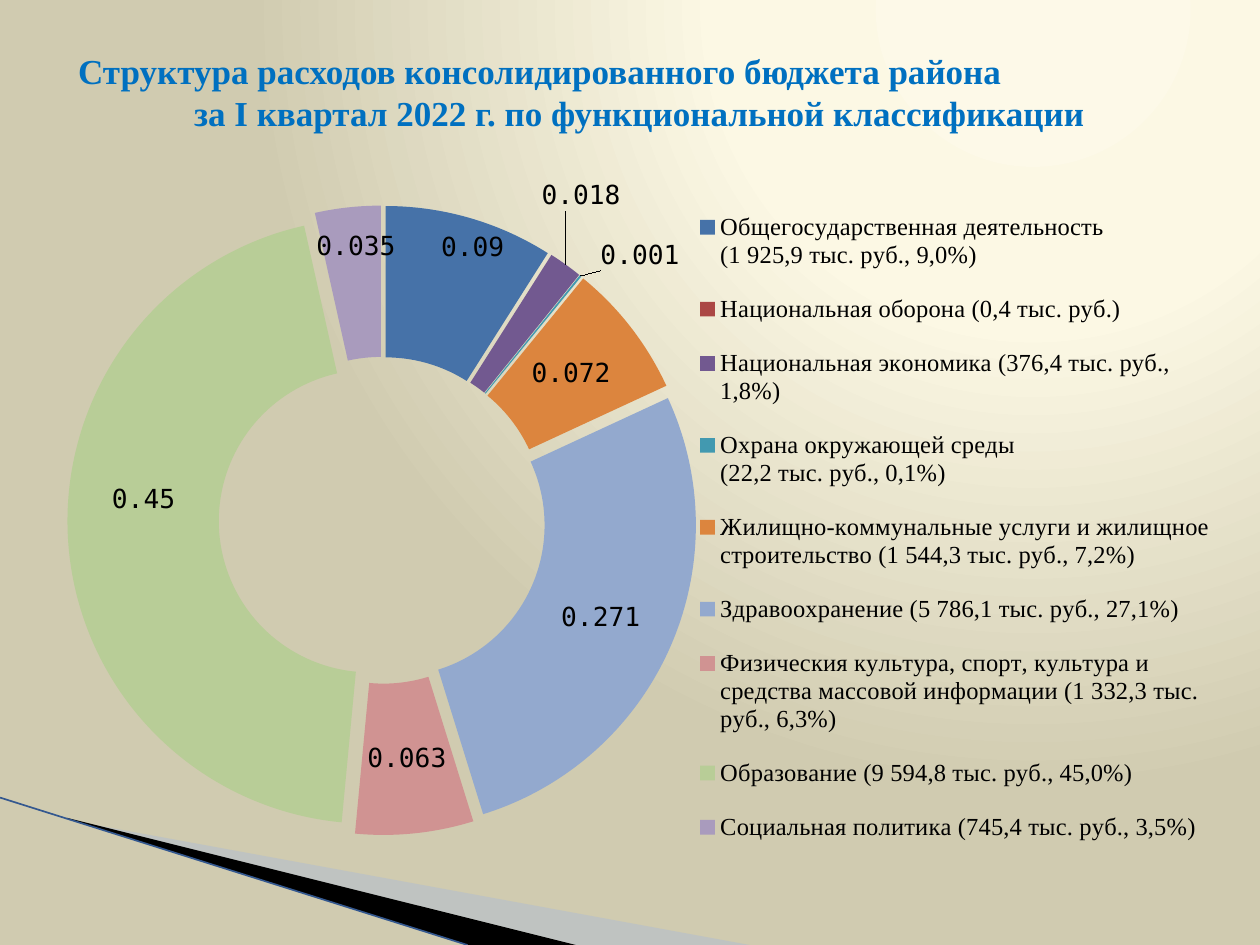
from lxml import etree
from pptx import Presentation
from pptx.chart.data import CategoryChartData
from pptx.dml.color import RGBColor
from pptx.enum.chart import XL_CHART_TYPE as ChartType, XL_LEGEND_POSITION as LegendPosition
from pptx.enum.shapes import MSO_CONNECTOR as Connector
from pptx.enum.text import MSO_ANCHOR as Anchor, PP_ALIGN as Align
from pptx.oxml import parse_xml
from pptx.oxml.ns import nsdecls, qn
from pptx.util import Inches, Pt

COLORS = {
    "glow": "FDF9E8", "cream": "FCF8E4", "sand": "D0CBB0",
    "mist": "A7B9DB", "black": "000000", "edge": "34588F", "title": "0070C0",
}
SERIF, MONO = "Times New Roman", "DejaVu Sans Mono"

# Legend text, share of spending, slice colour, label offset (fractions of the chart)
EXPENSES = [
    ("Общегосударственная деятельность\n(1 925,9 тыс. руб., 9,0%)", 0.09, "4672A8", (0.02, -0.06)),
    ("Национальная оборона (0,4 тыс. руб.)", None, "AB4744", None),
    ("", None, "8AA64F", None),
    ("Национальная экономика (376,4 тыс. руб., 1,8%)", 0.018, "725990", (0.05, -0.18)),
    ("Охрана окружающей среды\n(22,2 тыс. руб., 0,1%)", 0.001, "4299B0", (0.09, -0.11)),
    ("Жилищно-коммунальные услуги и жилищное строительство (1 544,3 тыс. руб., 7,2%)",
     0.072, "DC853E", None),
    ("Здравоохранение (5 786,1 тыс. руб., 27,1%)", 0.271, "93A9CE", None),
    ("Физическия культура, спорт, культура и средства массовой информации "
     "(1 332,3 тыс. руб., 6,3%)", 0.063, "D09392", None),
    ("Образование (9 594,8 тыс. руб., 45,0%)", 0.45, "B8CD97", (0, -0.05)),
    ("Социальная политика (745,4 тыс. руб., 3,5%)", 0.035, "A99BBD", (0, -0.05)),
]
HIDDEN_ENTRY = 2


def color(name):
    return RGBColor.from_string(COLORS[name])


def manual_layout(x, y, size=None):
    """Chart layout element: a placed box, or an offset when no size is given."""
    values = {"x": x, "y": y}
    modes = ""
    if size:
        values.update(w=size[0], h=size[1])
        modes = '<c:xMode val="edge"/><c:yMode val="edge"/>'
    parts = "".join(f'<c:{key} val="{value}"/>' for key, value in values.items())
    return parse_xml(f'<c:layout {nsdecls("c")}><c:manualLayout>{modes}{parts}'
                     '</c:manualLayout></c:layout>')


presentation = Presentation()
presentation.slide_width, presentation.slide_height = Inches(10), Inches(7.5)
slide = presentation.slides.add_slide(presentation.slide_layouts[5])

# Background: round glow from the upper right
slide.background.fill.gradient()
gradient = slide.element.find(".//" + qn("a:gradFill"))
stops = "".join(
    f'<a:gs pos="{position}"><a:srgbClr val="{COLORS[name]}"/></a:gs>'
    for position, name in ((0, "glow"), (40000, "cream"), (100000, "sand")))
gradient.getparent().replace(gradient, parse_xml(
    f'<a:gradFill {nsdecls("a")} rotWithShape="1"><a:gsLst>{stops}</a:gsLst>'
    '<a:path path="circle"><a:fillToRect l="65000" b="98000"/></a:path></a:gradFill>'))

# Corner wedges
wedges = [
    ("mist", [(0.55, 6.51), (5.95, 7.5), (4.56, 7.5), (0.55, 6.5)]),
    ("black", [(0.53, 6.49), (4.57, 7.5), (3.72, 7.5), (0.54, 6.5)]),
]
for name, points in wedges:
    corners = [(Inches(x), Inches(y)) for x, y in points]
    builder = slide.shapes.build_freeform(*corners[0])
    builder.add_line_segments(corners[1:], close=True)
    wedge = builder.convert_to_shape()
    wedge.shadow.inherit = False
    wedge.fill.solid()
    wedge.fill.fore_color.rgb = color(name)
    wedge.line.fill.background()
    if name == "mist":
        fill_color = wedge.element.spPr.find(".//" + qn("a:srgbClr"))
        etree.SubElement(fill_color, qn("a:alpha"), val="40000")

edge = slide.shapes.add_connector(Connector.STRAIGHT, Inches(0), Inches(6.33),
                                  Inches(3.71), Inches(7.5))
edge.line.color.rgb = color("edge")
edge.line.width = Pt(0.95)
etree.SubElement(edge.element.spPr, qn("a:effectLst"))

# Doughnut chart
chart_data = CategoryChartData()
chart_data.categories = [expense[0] for expense in EXPENSES]
chart_data.add_series("Series 1", [expense[1] for expense in EXPENSES])
chart = slide.shapes.add_chart(ChartType.DOUGHNUT_EXPLODED, Inches(0.35), Inches(1.31),
                               Inches(9.45), Inches(5.75), chart_data).chart
chart.has_title = False
chart.font.name, chart.font.size = MONO, Pt(18)
chart.font.color.rgb = color("black")

plot = chart.plots[0]
plot.vary_by_categories = True
plot_area = chart.element.find(".//" + qn("c:plotArea"))
for old_layout in plot_area.findall(qn("c:layout")):
    plot_area.remove(old_layout)
plot_layout = manual_layout(0.01, 0.056, (0.548, 0.869))
plot_layout[0].insert(0, parse_xml(f'<c:layoutTarget {nsdecls("c")} val="inner"/>'))
plot_area.insert(0, plot_layout)
plot_area.find(".//" + qn("c:holeSize")).set("val", "50")
explosion = plot_area.find(".//" + qn("c:explosion"))
if explosion is not None:
    explosion.set("val", "8")

series = plot.series[0]
series.data_labels.show_value = True
series.data_labels.font.size = Pt(15)
for index, (_, _, slice_color, offset) in enumerate(EXPENSES):
    point = series.points[index]
    point.format.fill.solid()
    point.format.fill.fore_color.rgb = RGBColor.from_string(slice_color)
    point.format.line.fill.background()
    if offset:
        point.data_label.font.size = Pt(15)
        label = plot_area.findall(".//" + qn("c:dLbl"))[-1]
        label.find(qn("c:idx")).addnext(manual_layout(*offset))

# Legend, without the empty category
chart.has_legend = True
chart.legend.position = LegendPosition.RIGHT
chart.legend.include_in_layout = False
chart.legend.font.name, chart.legend.font.size = SERIF, Pt(14)
legend = chart.element.find(".//" + qn("c:legend"))
for old_layout in legend.findall(qn("c:layout")):
    legend.remove(old_layout)
legend_position = legend.find(qn("c:legendPos"))
legend_position.addnext(manual_layout(0.54, 0.03, (0.45, 0.94)))
legend_position.addnext(parse_xml(
    f'<c:legendEntry {nsdecls("c")}><c:idx val="{HIDDEN_ENTRY}"/>'
    '<c:delete val="1"/></c:legendEntry>'))

# Title: first line from the left, second line centred
title = slide.shapes.title
title.left, title.top, title.width, title.height = (
    Inches(value) for value in (0.43, 0.3, 9.29, 0.85))
frame = title.text_frame
frame.margin_left = frame.margin_right = Inches(0.19)
frame.vertical_anchor = Anchor.MIDDLE
frame.text = ("Структура расходов консолидированного бюджета района\n"
              "за I квартал 2022 г. по функциональной классификации")
for paragraph, alignment in zip(frame.paragraphs, (Align.LEFT, Align.CENTER)):
    paragraph.alignment = alignment
    paragraph.space_before = Pt(0)
    font = paragraph.runs[0].font
    font.name, font.size, font.bold = SERIF, Pt(20), True
    font.color.rgb = color("title")

presentation.save("out.pptx")
